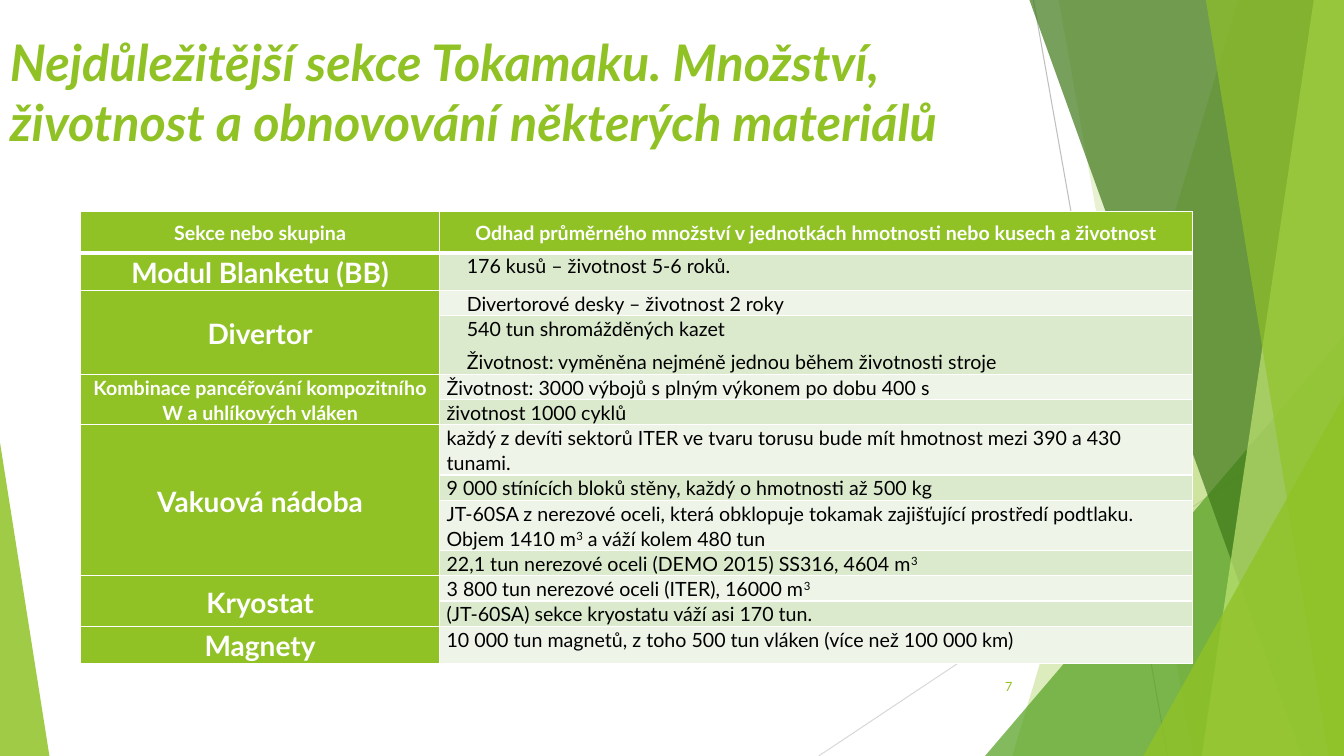
from dataclasses import dataclass

from lxml.etree import SubElement
from pptx import Presentation
from pptx.dml.color import RGBColor
from pptx.enum.shapes import MSO_CONNECTOR, MSO_SHAPE
from pptx.enum.text import MSO_ANCHOR as Anchor, PP_ALIGN as Align
from pptx.oxml.ns import qn
from pptx.util import Inches, Pt


@dataclass(frozen=True)
class Theme:
    font: str = "Lato"
    green: str = "90C226"
    mid_green: str = "54A021"
    dark_green: str = "3F7819"
    light_green: str = "C0E474"
    band_dark: str = "DBE9CD"
    band_light: str = "EEF4E8"
    white: str = "FFFFFF"
    black: str = "000000"
    line_dark: str = "BFBFBF"
    line_light: str = "D9D9D9"
    title_size: int = 36
    section_size: int = 20
    body_size: int = 14
    number_size: int = 9


THEME = Theme()
WIDTH, HEIGHT = 13.33, 7.5

TITLE = ("Nejdůležitější sekce Tokamaku. Množství, životnost "
         "a obnovování některých materiálů")
HEADER = ("Sekce nebo skupina",
          "Odhad průměrného množství v jednotkách hmotnosti nebo kusech a životnost")
HEADER_HEIGHT = 0.41

# Section, label size, first-line indent, rows of (height, text);
# "^" raises the next character, a line break starts a paragraph
SECTIONS = [
    ("Modul Blanketu (BB)", THEME.section_size, 0.2, [
        (0.37, "176 kusů – životnost 5-6 roků.")]),
    ("Divertor", THEME.section_size, 0.2, [
        (0.25, "Divertorové desky – životnost 2 roky"),
        (0.58, "540 tun shromážděných kazet\n"
               "Životnost: vyměněna nejméně jednou během životnosti stroje")]),
    ("Kombinace pancéřování kompozitního W a uhlíkových vláken", THEME.body_size, 0, [
        (0.25, "Životnost: 3000 výbojů s plným výkonem po dobu 400 s"),
        (0.25, "životnost 1000 cyklů")]),
    ("Vakuová nádoba", THEME.section_size, 0, [
        (0.5, "každý z devíti sektorů ITER ve tvaru torusu bude mít hmotnost "
              "mezi 390 a 430 tunami."),
        (0.25, "9 000 stínících bloků stěny, každý o hmotnosti až 500 kg"),
        (0.5, "JT-60SA z nerezové oceli, která obklopuje tokamak zajišťující "
              "prostředí podtlaku. Objem 1410 m^3 a váží kolem 480 tun"),
        (0.25, "22,1 tun nerezové oceli (DEMO 2015) SS316, 4604 m^3")]),
    ("Kryostat", THEME.section_size, 0, [
        (0.25, "3 800 tun nerezové oceli (ITER), 16000 m^3"),
        (0.25, "(JT-60SA) sekce kryostatu váží asi 170 tun.")]),
    ("Magnety", THEME.section_size, 0, [
        (0.37, "10 000 tun magnetů, z toho 500 tun vláken (více než 100 000 km)")]),
]


def write_text(frame, text, *, size, color, bold=False, italic=False,
               align=Align.LEFT, spacing=None, after=None, indent=0):
    for index, line in enumerate(text.split("\n")):
        paragraph = frame.add_paragraph() if index else frame.paragraphs[0]
        paragraph.alignment = align
        if spacing:
            paragraph.line_spacing = spacing
        if after:
            paragraph.space_after = Pt(after)
        if indent:
            paragraph._p.get_or_add_pPr().set("indent", str(Inches(indent)))
        first, *rest = line.split("^")
        pieces = [(first, False)]
        for part in rest:
            pieces += [(part[0], True), (part[1:], False)]
        for piece, raised in pieces:
            if not piece:
                continue
            run = paragraph.add_run()
            run.text = piece
            font = run.font
            font.name, font.size = THEME.font, Pt(size)
            font.bold, font.italic = bold, italic
            font.color.rgb = RGBColor.from_string(color)
            if raised:
                run._r.get_or_add_rPr().set("baseline", "30000")


def add_text_box(slide, left, top, width, height, text, *,
                 anchor=Anchor.TOP, margin_right=0.1, **text_format):
    box = slide.shapes.add_textbox(*map(Inches, (left, top, width, height)))
    frame = box.text_frame
    frame.word_wrap = True
    frame.vertical_anchor = anchor
    frame.margin_right = Inches(margin_right)
    write_text(frame, text, **text_format)


def paint(shape, color, opacity):
    shape.shadow.inherit = False
    shape.line.fill.background()
    shape.fill.solid()
    shape.fill.fore_color.rgb = RGBColor.from_string(color)
    color_element = shape._element.spPr.find(qn("a:solidFill"))[0]
    SubElement(color_element, qn("a:alpha"), val=str(opacity * 1000))


def add_slab(slide, top_x, bottom_x, color, opacity):
    """Full-height panel with a slanted left edge, reaching the right slide edge."""
    builder = slide.shapes.build_freeform(Inches(top_x), 0)
    corners = [(WIDTH, 0), (WIDTH, HEIGHT), (bottom_x, HEIGHT)]
    builder.add_line_segments([(Inches(x), Inches(y)) for x, y in corners], close=True)
    paint(builder.convert_to_shape(), color, opacity)


def add_triangle(slide, left, top, width, apex, color, opacity):
    shape = slide.shapes.add_shape(
        MSO_SHAPE.ISOSCELES_TRIANGLE,
        *map(Inches, (left, top, width, HEIGHT - top)))
    shape.adjustments[0] = apex
    paint(shape, color, opacity)


def add_thin_line(slide, x1, y1, x2, y2, color):
    line = slide.shapes.add_connector(
        MSO_CONNECTOR.STRAIGHT, *map(Inches, (x1, y1, x2, y2)))
    line.line.width = Pt(0.75)
    line.line.color.rgb = RGBColor.from_string(color)
    SubElement(line._element.spPr, qn("a:effectLst"))


def add_backdrop(slide):
    add_thin_line(slide, 10.25, 0, 11.58, HEIGHT, THEME.line_dark)
    add_thin_line(slide, WIDTH, 4.03, 8.12, HEIGHT, THEME.line_light)
    add_slab(slide, 12.28, 10.04, THEME.green, 30)
    add_slab(slide, 10.5, 11.83, THEME.green, 20)
    add_triangle(slide, 9.77, 3.33, 3.56, 1, THEME.mid_green, 72)
    add_slab(slide, 10.21, 12.91, THEME.dark_green, 70)
    add_slab(slide, 13.03, 11.92, THEME.light_green, 70)
    add_slab(slide, 11.96, 13.18, THEME.green, 65)
    add_triangle(slide, 11.34, 3.93, 1.99, 1, THEME.green, 80)
    add_triangle(slide, 0, 4.39, 0.49, 0, THEME.green, 85)


def style_cell(cell, fill, anchor, top=1, bottom=1):
    properties = cell._tc.get_or_add_tcPr()
    for side, width in (("L", 1), ("R", 1), ("T", top), ("B", bottom)):
        border = SubElement(properties, qn(f"a:ln{side}"), w=str(Pt(width)))
        solid = SubElement(border, qn("a:solidFill"))
        SubElement(solid, qn("a:srgbClr"), val=THEME.white)
    cell.fill.solid()
    cell.fill.fore_color.rgb = RGBColor.from_string(fill)
    cell.vertical_anchor = anchor
    cell.margin_left = cell.margin_right = Inches(0.07)
    cell.margin_top = cell.margin_bottom = 0


def add_materials_table(slide):
    heights = [HEADER_HEIGHT] + [h for *_, rows in SECTIONS for h, _ in rows]
    columns = (3.56, 7.47)
    frame = slide.shapes.add_table(
        len(heights), len(columns),
        *map(Inches, (0.8, 2.1, sum(columns), sum(heights))))
    table = frame.table
    table.first_row = table.horz_banding = False
    for column, width in zip(table.columns, columns):
        column.width = Inches(width)
    for row, height in zip(table.rows, heights):
        row.height = Inches(height)

    body = dict(spacing=1.07, after=6)
    label = dict(body, color=THEME.white, bold=True, align=Align.CENTER)

    # Header row
    for cell, text in zip(table.rows[0].cells, HEADER):
        style_cell(cell, THEME.green, Anchor.MIDDLE, bottom=3)
        write_text(cell.text_frame, text, size=THEME.body_size, **label)

    # Sections, with shaded rows alternating down the table
    row = 1
    for name, size, indent, rows in SECTIONS:
        start = row
        for _, text in rows:
            top = 3 if row == 1 else 1
            band = THEME.band_dark if row % 2 else THEME.band_light
            style_cell(table.cell(row, 0), THEME.green, Anchor.MIDDLE, top=top)
            style_cell(table.cell(row, 1), band, Anchor.TOP, top=top)
            write_text(table.cell(row, 1).text_frame, text, size=THEME.body_size,
                       color=THEME.black, indent=indent, **body)
            row += 1
        section = table.cell(start, 0)
        if len(rows) > 1:
            section.merge(table.cell(row - 1, 0))
        write_text(section.text_frame, name, size=size, **label)


def main():
    presentation = Presentation()
    presentation.slide_width = Inches(WIDTH)
    presentation.slide_height = Inches(HEIGHT)
    slide = presentation.slides.add_slide(presentation.slide_layouts[6])
    add_backdrop(slide)
    add_text_box(slide, 0, 0.26, 10.86, 1.3, TITLE, margin_right=0.3,
                 size=THEME.title_size, color=THEME.green, bold=True, italic=True)
    add_materials_table(slide)
    add_text_box(slide, 9.39, 6.61, 0.75, 0.4, "7", anchor=Anchor.MIDDLE,
                 size=THEME.number_size, color=THEME.green, align=Align.RIGHT)
    presentation.save("out.pptx")


if __name__ == "__main__":
    main()
